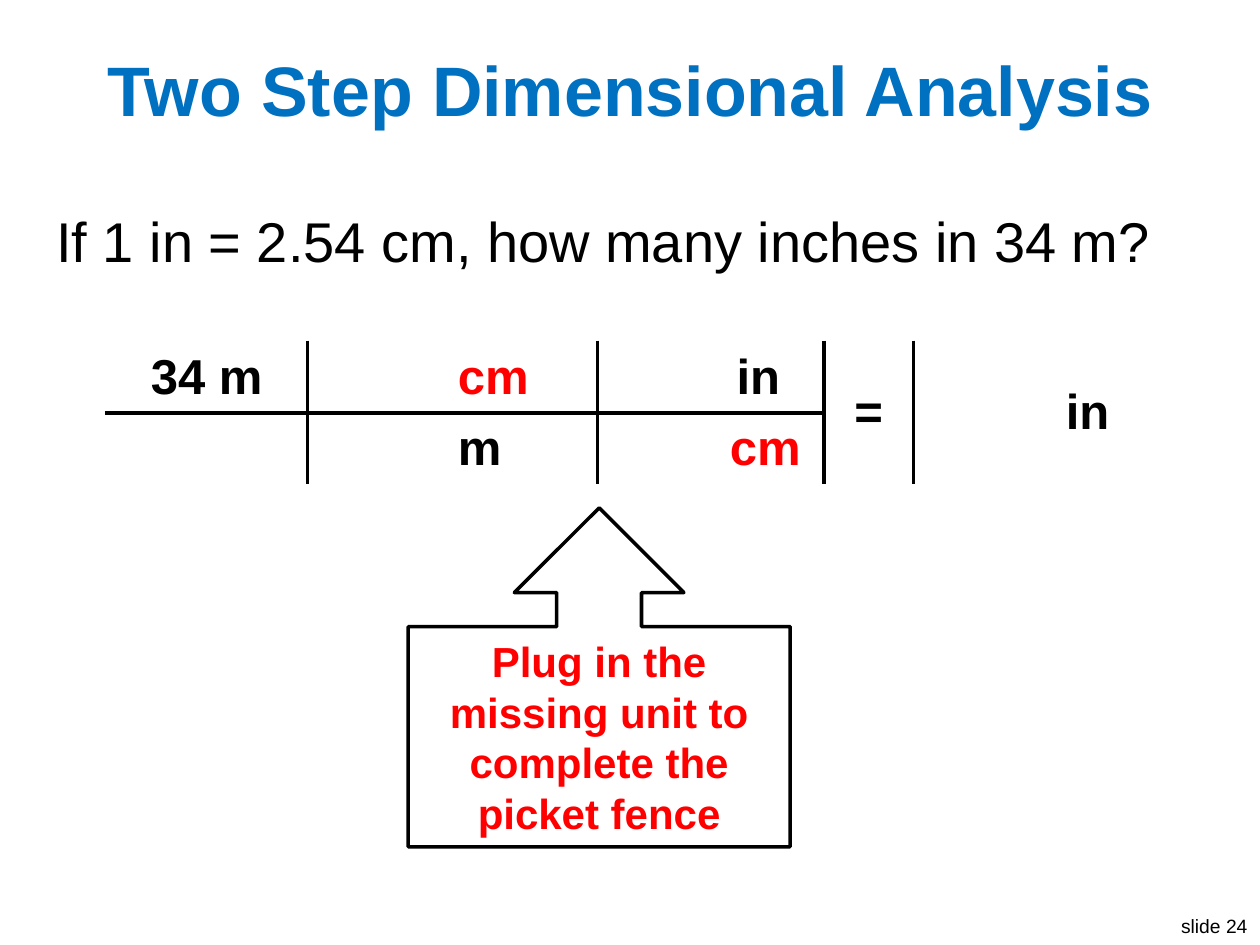
from dataclasses import dataclass

from lxml.etree import Element, SubElement
from pptx import Presentation
from pptx.dml.color import RGBColor
from pptx.enum.shapes import MSO_SHAPE
from pptx.enum.text import MSO_ANCHOR, PP_ALIGN
from pptx.oxml.ns import qn
from pptx.util import Pt


@dataclass(frozen=True)
class Theme:
    font: str = "Arial"
    black: str = "000000"
    white: str = "FFFFFF"
    blue: str = "0070C0"
    red: str = "FF0000"
    title: float = 40
    question: float = 32
    fence: float = 28
    callout: float = 24
    footer: float = 11
    fence_line: float = 2.25
    callout_line: float = 2


THEME = Theme()
COLUMN_WIDTHS = (115.2, 165.6, 129.6, 51.1, 136.8)
ROW_HEIGHT = 40.7
FENCE_COLUMNS = 3
CELL_MARGIN = 7.2

# row, column, text, colour, indent that leaves room for the number
FENCE_CELLS = (
    (0, 0, "34 m", THEME.black, 0),
    (0, 1, "cm", THEME.red, 46.7),
    (0, 2, "in", THEME.black, 54.5),
    (0, 3, "=", THEME.black, 0),
    (0, 4, "in", THEME.black, 62.3),
    (1, 1, "m", THEME.black, 31.1),
    (1, 2, "cm", THEME.red, 62.3),
)


def write_text(frame, text, *, size, color=THEME.black, bold=False,
               align=PP_ALIGN.LEFT):
    para = frame.paragraphs[0]
    para.alignment = align
    span = para.add_run()
    span.text = text
    span.font.name = THEME.font
    span.font.size = Pt(size)
    span.font.bold = bold
    span.font.color.rgb = RGBColor.from_string(color)


def add_text(page, bounds, text, *, wrap=True, anchor=MSO_ANCHOR.TOP, **style):
    box = page.shapes.add_textbox(*map(Pt, bounds))
    box.text_frame.word_wrap = wrap
    box.text_frame.vertical_anchor = anchor
    write_text(box.text_frame, text, **style)


def set_borders(cell, sides):
    """Draw black borders on the given sides, a subset of L, R, T and B."""
    properties = cell._tc.get_or_add_tcPr()
    for index, side in enumerate(sides):
        border = Element(qn(f"a:ln{side}"), w=str(Pt(THEME.fence_line)))
        fill = SubElement(border, qn("a:solidFill"))
        SubElement(fill, qn("a:srgbClr"), val=THEME.black)
        properties.insert(index, border)


def fence_sides(row, column):
    sides = ""
    if 1 <= column <= FENCE_COLUMNS:
        sides += "L"
    if column < FENCE_COLUMNS:
        sides += "R" + ("B" if row == 0 else "T")
    return sides


def add_fence(page, left, top):
    frame = page.shapes.add_table(2, len(COLUMN_WIDTHS), Pt(left), Pt(top),
                                  Pt(sum(COLUMN_WIDTHS)), Pt(2 * ROW_HEIGHT))
    table = frame.table
    table.first_row = table.horz_banding = False
    for column, width in zip(table.columns, COLUMN_WIDTHS):
        column.width = Pt(width)

    # Plain cells with the picket lines
    for row_index, row in enumerate(table.rows):
        row.height = Pt(ROW_HEIGHT)
        for column_index, cell in enumerate(row.cells):
            cell.fill.solid()
            cell.fill.fore_color.rgb = RGBColor.from_string(THEME.white)
            set_borders(cell, fence_sides(row_index, column_index))

    # The result spans both rows
    for column in range(FENCE_COLUMNS, len(COLUMN_WIDTHS)):
        table.cell(0, column).merge(table.cell(1, column))

    for row, column, text, color, indent in FENCE_CELLS:
        cell = table.cell(row, column)
        cell.vertical_anchor = MSO_ANCHOR.MIDDLE
        cell.margin_left = Pt(CELL_MARGIN + indent)
        write_text(cell.text_frame, text, size=THEME.fence, color=color,
                   bold=True, align=PP_ALIGN.CENTER)


def add_callout(page, bounds, text, **style):
    callout = page.shapes.add_shape(MSO_SHAPE.UP_ARROW_CALLOUT, *map(Pt, bounds))
    callout.shadow.inherit = False
    callout.fill.background()
    callout.line.color.rgb = RGBColor.from_string(THEME.black)
    callout.line.width = Pt(THEME.callout_line)
    frame = callout.text_frame
    frame.word_wrap = True
    frame.vertical_anchor = MSO_ANCHOR.MIDDLE
    frame.margin_left = frame.margin_right = Pt(1.44)
    frame.margin_top = frame.margin_bottom = Pt(1.44)
    write_text(frame, text, **style)


def main():
    deck = Presentation()
    deck.slide_width, deck.slide_height = Pt(720), Pt(540)
    page = deck.slides.add_slide(deck.slide_layouts[6])

    # Slide number
    add_text(page, (666, 519.1, 54, 20.9), "slide 24", wrap=False,
             size=THEME.footer, align=PP_ALIGN.RIGHT)

    # Title and question
    add_text(page, (14.4, 21.6, 691.2, 57.6), "Two Step Dimensional Analysis",
             anchor=MSO_ANCHOR.MIDDLE, size=THEME.title, color=THEME.blue,
             bold=True, align=PP_ALIGN.CENTER)
    add_text(page, (25.2, 114.5, 669.6, 46.1),
             "If 1 in = 2.54 cm, how many inches in 34 m?", size=THEME.question)

    # Picket fence and its hint
    add_fence(page, 60.5, 195.1)
    add_callout(page, (233.3, 290.2, 218.2, 193.7),
                "Plug in the missing unit to complete the picket fence",
                size=THEME.callout, color=THEME.red, bold=True,
                align=PP_ALIGN.CENTER)

    deck.save("out.pptx")


if __name__ == "__main__":
    main()
